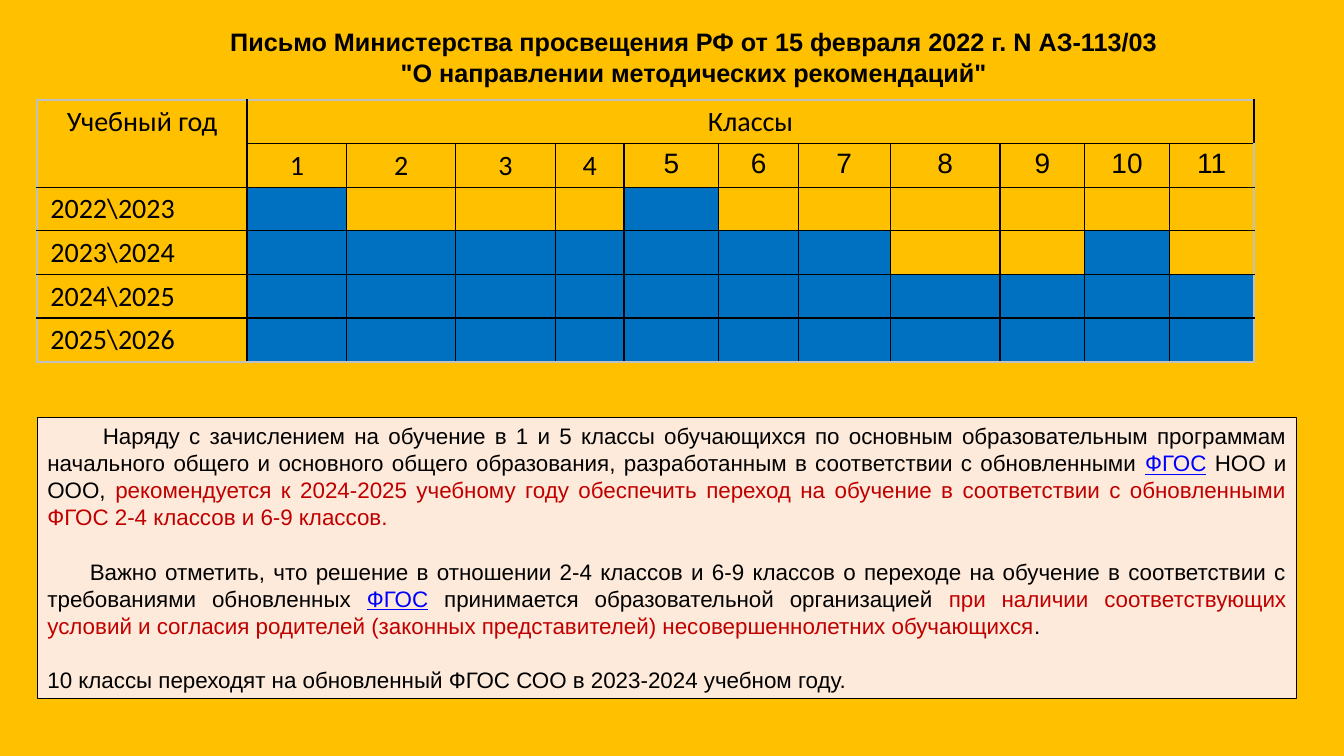
from dataclasses import dataclass

from lxml import etree
from pptx import Presentation
from pptx.dml.color import RGBColor
from pptx.enum.text import MSO_ANCHOR, MSO_AUTO_SIZE, PP_ALIGN
from pptx.oxml.ns import qn
from pptx.util import Emu, Inches, Pt

CENTER, LEFT, JUSTIFY = PP_ALIGN.CENTER, PP_ALIGN.LEFT, PP_ALIGN.JUSTIFY
TOP, NO_FIT = MSO_ANCHOR.TOP, MSO_AUTO_SIZE.NONE
WIDTH, HEIGHT = Inches(13.33), Inches(7.5)
GRID_COLS, GRID_ROWS = 1333, 750


@dataclass(frozen=True)
class Theme:
    back: str = "FFC000"
    ink: str = "000000"
    accent: str = "C00000"
    link: str = "0000FF"
    panel: str = "FDEADA"
    mark: str = "0070C0"
    frame: str = "C0C0C0"
    sans: str = "Arial"
    table: str = "Calibri"
    title_size: int = 18
    body_size: int = 16
    table_size: int = 20


THEME = Theme()


@dataclass(frozen=True)
class Box:
    """A place counted in grid columns and rows."""
    col: int
    row: int
    cols: int
    rows: int

    def frame(self) -> dict[str, int]:
        return {"left": across(self.col), "top": down(self.row),
                "width": across(self.cols), "height": down(self.rows)}


@dataclass(frozen=True)
class Span:
    text: str
    color: str = THEME.ink
    underline: bool = False


@dataclass(frozen=True)
class Para:
    spans: tuple[Span, ...]
    indent: float = 0
    before: float = 0


@dataclass(frozen=True)
class SchoolYear:
    name: str
    classes: tuple[int, ...]


def across(n: float) -> Emu:
    return Emu(round(WIDTH * n / GRID_COLS))


def down(n: float) -> Emu:
    return Emu(round(HEIGHT * n / GRID_ROWS))


def rgb(color: str) -> RGBColor:
    return RGBColor.from_string(color)


def apply(obj, values: dict) -> None:
    for name, value in values.items():
        setattr(obj, name, value)


def add_run(p, text: str, size: int, font: str = THEME.sans,
            color: str = THEME.ink, bold: bool = False,
            underline: bool = False) -> None:
    r = p.add_run()
    r.text = text
    apply(r.font, {"size": Pt(size), "name": font, "bold": bold,
                   "underline": underline})
    r.font.color.rgb = rgb(color)


def set_frame(sp, box: Box) -> None:
    apply(sp, box.frame())
    apply(sp.text_frame, {
        "word_wrap": True, "auto_size": NO_FIT, "vertical_anchor": TOP,
        "margin_left": Inches(0.1), "margin_right": Inches(0.1),
        "margin_top": Inches(0.05), "margin_bottom": Inches(0.05)})


def draw_title(sp, box: Box, lines: tuple[str, ...]) -> None:
    set_frame(sp, box)
    p = sp.text_frame.paragraphs[0]
    apply(p, {"alignment": CENTER, "line_spacing": Pt(22)})
    for i, line in enumerate(lines):
        if i:
            p.add_line_break()
        add_run(p, line, THEME.title_size, bold=True)


def draw_body(sp, box: Box, paras: tuple[Para, ...]) -> None:
    set_frame(sp, box)
    sp.fill.solid()
    sp.fill.fore_color.rgb = rgb(THEME.panel)
    sp.line.color.rgb = rgb(THEME.ink)
    sp.line.width = Pt(1)
    tf = sp.text_frame
    for i, para in enumerate(paras):
        p = tf.add_paragraph() if i else tf.paragraphs[0]
        apply(p, {"alignment": JUSTIFY, "line_spacing": Pt(19.3),
                  "space_before": Pt(para.before), "space_after": Pt(0)})
        pPr = p._p.get_or_add_pPr()
        pPr.set("marL", "0")
        pPr.set("indent", str(Inches(para.indent)))
        etree.SubElement(pPr, qn("a:buNone"))
        for s in para.spans:
            add_run(p, s.text, THEME.body_size, color=s.color,
                    underline=s.underline)


def set_borders(cell, outer: dict[str, bool]) -> None:
    tcPr = cell._tc.get_or_add_tcPr()
    for i, (side, is_outer) in enumerate(outer.items()):
        ln = etree.Element(qn(f"a:ln{side}"), w=str(Pt(1.5 if is_outer else 1)))
        fill = etree.SubElement(ln, qn("a:solidFill"))
        etree.SubElement(fill, qn("a:srgbClr"),
                         val=THEME.frame if is_outer else THEME.ink)
        tcPr.insert(i, ln)


def write_cell(cell, text: str, font: str = THEME.table, align=CENTER) -> None:
    p = cell.text_frame.paragraphs[0]
    p.alignment = align
    add_run(p, text, THEME.table_size, font)


def draw_schedule(slide, box: Box, widths: tuple[int, ...],
                  years: tuple[SchoolYear, ...]) -> None:
    n_rows, n_cols = len(years) + 2, len(widths)
    table = slide.shapes.add_table(n_rows, n_cols, **box.frame()).table
    apply(table, {"first_row": False, "horz_banding": False})
    for column, width in zip(table.columns, widths):
        column.width = across(width)
    for row in table.rows:
        row.height = down(box.rows / n_rows)

    # Fills, margins and borders
    for r in range(n_rows):
        for c in range(n_cols):
            cell = table.cell(r, c)
            apply(cell, {"margin_left": Inches(0.13), "margin_right": Inches(0.13),
                         "margin_top": Inches(0.05), "margin_bottom": Inches(0.04)})
            if r > 1 and c in years[r - 2].classes:
                cell.fill.solid()
                cell.fill.fore_color.rgb = rgb(THEME.mark)
            else:
                cell.fill.background()
            set_borders(cell, {"L": c == 0, "R": c == n_cols - 1,
                               "T": r == 0, "B": r == n_rows - 1})

    # Headings and year names
    table.cell(0, 0).merge(table.cell(1, 0))
    table.cell(0, 1).merge(table.cell(0, n_cols - 1))
    write_cell(table.cell(0, 0), "Учебный год")
    write_cell(table.cell(0, 1), "Классы")
    for c in range(1, n_cols):
        write_cell(table.cell(1, c), str(c), THEME.table if c < 5 else THEME.sans)
    for r, year in enumerate(years, start=2):
        write_cell(table.cell(r, 0), year.name, align=LEFT)


TITLE = ("Письмо Министерства просвещения РФ от 15 февраля 2022 г. N АЗ-113/03",
         "\"О направлении методических рекомендаций\"")
ALL_CLASSES = tuple(range(1, 12))
YEARS = (SchoolYear("2022\\2023", (1, 5)),
         SchoolYear("2023\\2024", (1, 2, 3, 4, 5, 6, 7, 10)),
         SchoolYear("2024\\2025", ALL_CLASSES),
         SchoolYear("2025\\2026", ALL_CLASSES))
COLUMN_WIDTHS = (208, 99, 108, 99, 68, 94, 79, 91, 109, 84, 84, 84)
STANDARD = Span("ФГОС", THEME.link, True)
PARAS = (
    Para((Span("Наряду с зачислением на обучение в 1 и 5 классы обучающихся по основным образовательным программам начального общего и основного общего образования, разработанным в соответствии с обновленными "),
          STANDARD, Span(" НОО и ООО, "),
          Span("рекомендуется к 2024-2025 учебному году обеспечить переход на обучение в соответствии с обновленными ФГОС 2-4 классов и 6-9 классов.", THEME.accent)), indent=0.55),
    Para((Span("Важно отметить, что решение в отношении 2-4 классов и 6-9 классов о переходе на обучение в соответствии с требованиями обновленных "),
          STANDARD, Span(" принимается образовательной организацией "),
          Span("при наличии соответствующих условий и согласия родителей (законных представителей) несовершеннолетних обучающихся", THEME.accent),
          Span(".")), indent=0.42, before=19.3),
    Para((Span("10 классы переходят на обновленный ФГОС СОО в 2023-2024 учебном году."),),
         before=19.3))


def main() -> None:
    prs = Presentation()
    apply(prs, {"slide_width": WIDTH, "slide_height": HEIGHT})
    slide = prs.slides.add_slide(prs.slide_layouts[1])
    slide.background.fill.solid()
    slide.background.fill.fore_color.rgb = rgb(THEME.back)
    draw_title(slide.shapes.title, Box(58, 21, 1260, 71), TITLE)
    draw_body(slide.placeholders[1], Box(37, 414, 1249, 279), PARAS)
    draw_schedule(slide, Box(37, 99, 1207, 260), COLUMN_WIDTHS, YEARS)
    prs.save("out.pptx")


if __name__ == "__main__":
    main()
